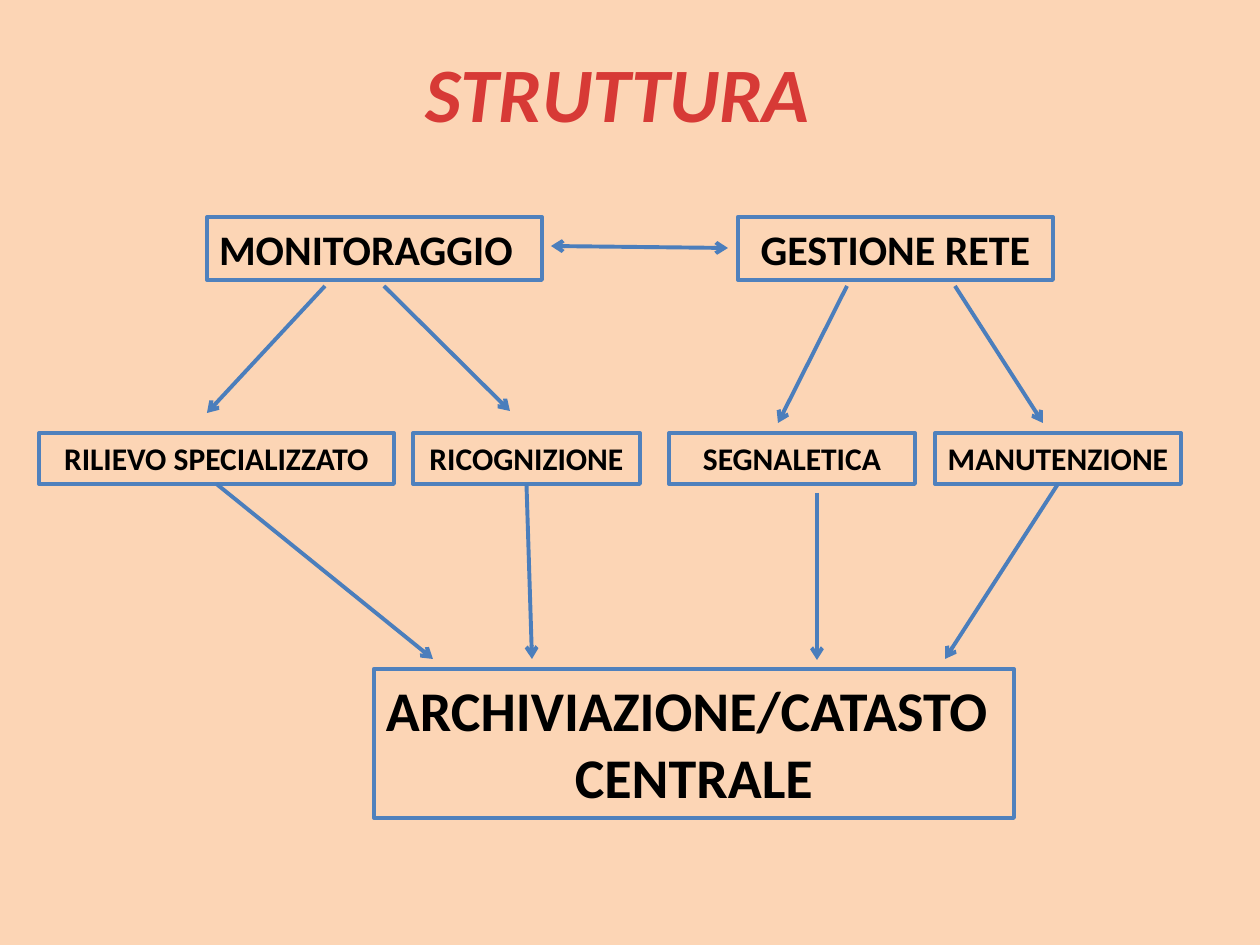
from lxml import etree
from pptx import Presentation
from pptx.dml.color import RGBColor
from pptx.enum.shapes import MSO_CONNECTOR, MSO_SHAPE
from pptx.enum.text import MSO_ANCHOR, MSO_AUTO_SIZE, PP_ALIGN
from pptx.oxml.ns import qn
from pptx.util import Emu, Pt

LEFT, CENTER = PP_ALIGN.LEFT, PP_ALIGN.CENTER
TOP, MIDDLE = MSO_ANCHOR.TOP, MSO_ANCHOR.MIDDLE
GROW = MSO_AUTO_SIZE.SHAPE_TO_FIT_TEXT
RECTANGLE, STRAIGHT = MSO_SHAPE.RECTANGLE, MSO_CONNECTOR.STRAIGHT
BOTTOM_SIDE = 2
SCALE = 914400 / 126
COLORS = {"background": "FCD5B5", "title": "D73A36", "border": "4F81BD",
          "arrow": "4B7EBC", "text": "000000"}


def px(value):
    return Emu(round(value * SCALE))


def write_text(shape, lines, alignments, frame_format, font_format, color):
    frame = shape.text_frame
    for name, value in frame_format.items():
        setattr(frame, name, value)
    for index, (line, alignment) in enumerate(zip(lines, alignments)):
        para = frame.paragraphs[0] if index == 0 else frame.add_paragraph()
        para.alignment = alignment
        span = para.add_run()
        span.text = line
        for name, value in font_format.items():
            setattr(span.font, name, value)
        span.font.color.rgb = RGBColor.from_string(COLORS[color])


deck = Presentation()
deck.slide_width, deck.slide_height = px(1260), px(945)
page = deck.slides.add_slide(deck.slide_layouts[5])
page.background.fill.solid()
page.background.fill.fore_color.rgb = RGBColor.from_string(COLORS["background"])

title = page.shapes.title
title.left, title.top, title.width, title.height = px(413), px(39), px(423), px(106)
write_text(title, ["STRUTTURA"], [LEFT],
           {"word_wrap": True, "auto_size": GROW, "vertical_anchor": TOP},
           {"name": "Calibri", "size": Pt(44), "bold": True, "italic": True}, "title")

box_rows = [
    (["MONITORAGGIO"], [LEFT], 207, 217, 335, 63, 24, TOP),
    (["GESTIONE RETE"], [CENTER], 738, 217, 315, 63, 24, MIDDLE),
    (["RILIEVO SPECIALIZZATO"], [CENTER], 39, 433, 355, 51, 18, TOP),
    (["RICOGNIZIONE"], [CENTER], 413, 433, 227, 51, 18, TOP),
    (["SEGNALETICA"], [CENTER], 669, 433, 246, 51, 18, TOP),
    (["MANUTENZIONE"], [CENTER], 935, 433, 246, 51, 18, TOP),
    (["ARCHIVIAZIONE/CATASTO", "CENTRALE"], [LEFT, CENTER], 374, 669, 640, 149, 32, TOP),
]
boxes = {}
for lines, alignments, left, top, width, height, size, anchor in box_rows:
    box = page.shapes.add_shape(RECTANGLE, px(left), px(top), px(width), px(height))
    box.shadow.inherit = False
    box.fill.background()
    box.line.color.rgb = RGBColor.from_string(COLORS["border"])
    box.line.width = Pt(2.25)
    side_margin = px(6 if size == 18 else 12)
    write_text(box, lines, alignments,
               {"word_wrap": True, "auto_size": GROW, "vertical_anchor": anchor,
                "margin_left": side_margin, "margin_right": side_margin},
               {"name": "Calibri", "size": Pt(size), "bold": True}, "text")
    boxes[lines[0]] = box

arrow_rows = [
    (551, 246, 728, 248, ["headEnd", "tailEnd"], None),
    (325, 286, 207, 413, ["tailEnd"], None),
    (384, 286, 510, 411, ["tailEnd"], None),
    (847, 286, 778, 423, ["tailEnd"], None),
    (955, 286, 1043, 423, ["tailEnd"], None),
    (217, 484, 433, 659, ["tailEnd"], "RILIEVO SPECIALIZZATO"),
    (527, 484, 532, 659, ["tailEnd"], "RICOGNIZIONE"),
    (817, 493, 817, 660, ["tailEnd"], None),
    (1058, 484, 945, 659, ["tailEnd"], "MANUTENZIONE"),
]
for start_x, start_y, end_x, end_y, ends, source in arrow_rows:
    arrow = page.shapes.add_connector(STRAIGHT, px(start_x), px(start_y), px(end_x), px(end_y))
    if source:
        arrow.begin_connect(boxes[source], BOTTOM_SIDE)
    arrow.line.color.rgb = RGBColor.from_string(COLORS["arrow"])
    arrow.line.width = Pt(2.25)
    for end in ends:
        etree.SubElement(arrow.line._get_or_add_ln(), qn(f"a:{end}"), type="arrow")
    etree.SubElement(arrow._element.spPr, qn("a:effectLst"))

deck.save("out.pptx")
